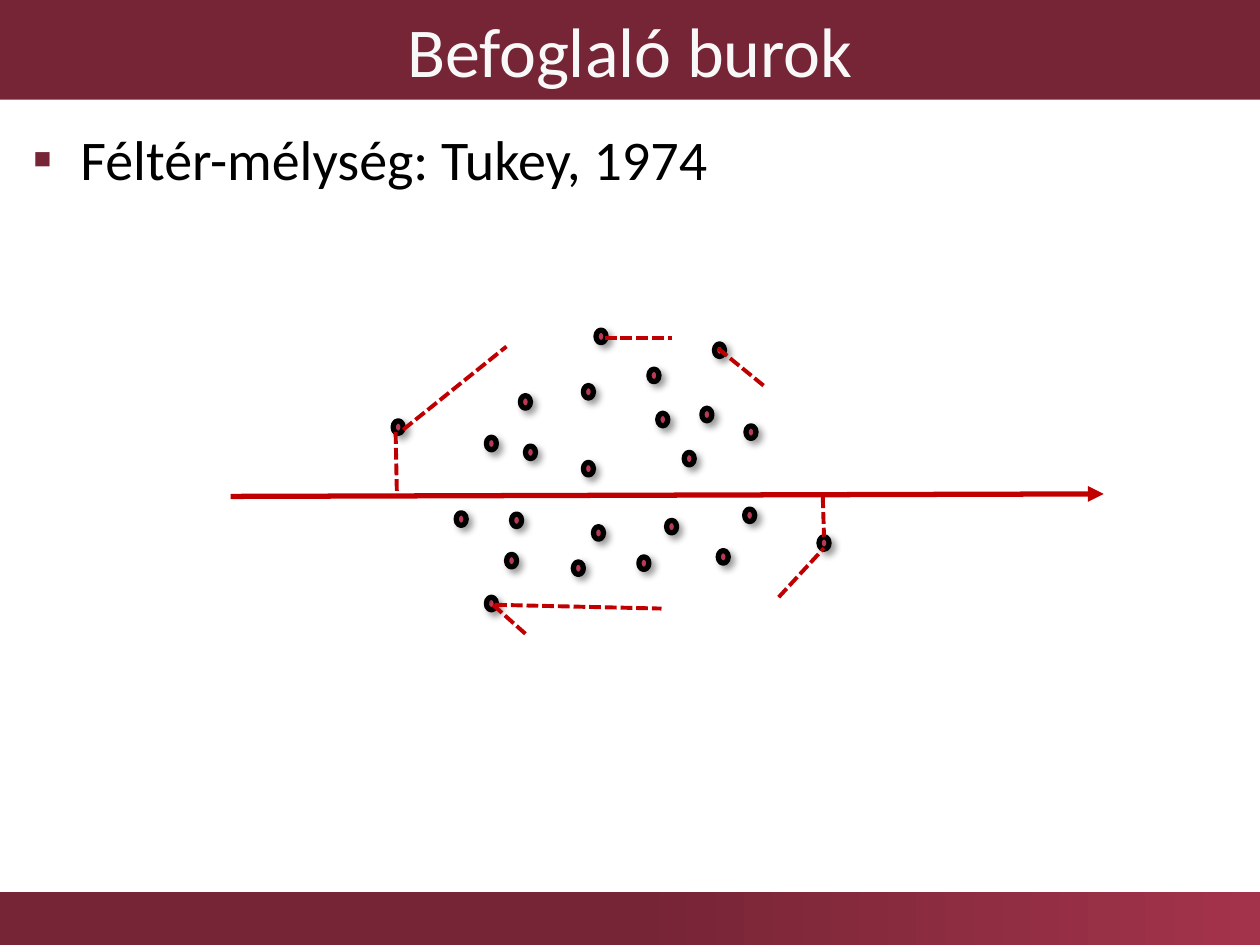
from lxml.etree import SubElement
from pptx import Presentation
from pptx.dml.color import RGBColor
from pptx.enum.dml import MSO_LINE
from pptx.enum.shapes import MSO_CONNECTOR, MSO_SHAPE
from pptx.enum.text import MSO_ANCHOR, PP_ALIGN
from pptx.oxml import parse_xml
from pptx.oxml.ns import nsdecls, qn
from pptx.util import Inches, Pt

TITLE = "Befoglaló burok"
BULLET_TEXT = "Féltér-mélység: Tukey, 1974"
FONT = "Calibri"
COLORS = {
    "band": "762536",
    "band_end": "A3334B",
    "title": "F8F8F8",
    "text": "000000",
    "point": "B83A55",
    "outline": "000000",
    "line": "C00000",
}

POINT_WIDTH, POINT_HEIGHT = 0.08, 0.1
POINTS = [  # left, top
    (4.13, 3.14), (3.62, 4.07), (4.17, 3.54), (5.29, 4.13), (5.22, 3.28), (4.73, 2.62),
    (6.5, 4.26), (5.57, 3.24), (3.86, 3.47), (4.06, 4.08), (3.12, 3.34), (4.63, 3.67),
    (5.43, 3.59), (4.71, 4.18), (5.92, 3.38), (5.15, 2.93), (3.86, 4.74), (4.02, 4.4),
    (4.55, 4.46), (4.63, 3.06), (5.91, 4.04), (5.7, 4.37), (5.67, 2.73), (5.07, 4.42),
]
AXIS = (1.83, 3.94, 8.76, 3.92)
HULL_LINES = [  # start x, start y, end x, end y
    (4.17, 5.03, 3.89, 4.78), (3.93, 4.8, 5.25, 4.83),
    (6.53, 3.94, 6.54, 4.26), (3.14, 3.43, 3.15, 3.93),
    (6.06, 3.06, 5.68, 2.75), (4.8, 2.68, 5.33, 2.68),
    (6.18, 4.74, 6.54, 4.35), (3.2, 3.41, 4.02, 2.75),
]


def color(name):
    return RGBColor.from_string(COLORS[name])


def add_shape(slide, kind, left, top, width, height, fill):
    shape = slide.shapes.add_shape(
        kind, Inches(left), Inches(top), Inches(width), Inches(height))
    shape.shadow.inherit = False
    shape.fill.solid()
    shape.fill.fore_color.rgb = color(fill)
    shape.line.fill.background()
    return shape


def add_run(paragraph, text, size, color_name):
    run = paragraph.add_run()
    run.text = text
    run.font.name = FONT
    run.font.size = Pt(size)
    run.font.color.rgb = color(color_name)


def add_bands(slide):
    footer = add_shape(slide, MSO_SHAPE.RECTANGLE, 0, 7.08, 10, 0.42, "band")
    footer.fill.gradient()
    footer.fill.gradient_angle = 0
    stops = [(0.5, "band"), (1, "band_end")]
    for stop, (position, name) in zip(footer.fill.gradient_stops, stops):
        stop.position = position
        stop.color.rgb = color(name)

    header = add_shape(slide, MSO_SHAPE.RECTANGLE, 0, 0, 10, 0.79, "band")
    header.text_frame.vertical_anchor = MSO_ANCHOR.MIDDLE
    paragraph = header.text_frame.paragraphs[0]
    paragraph.alignment = PP_ALIGN.CENTER
    add_run(paragraph, TITLE, 40, "title")


def add_body(slide):
    box = slide.shapes.add_textbox(Inches(0.16), Inches(0.94), Inches(9.69), Inches(6.05))
    box.text_frame.word_wrap = True
    paragraph = box.text_frame.paragraphs[0]
    properties = paragraph._p.get_or_add_pPr()
    properties.set("marL", str(Inches(0.38)))
    properties.set("indent", str(-Inches(0.38)))
    bullet_color = SubElement(properties, qn("a:buClr"))
    SubElement(bullet_color, qn("a:srgbClr"), val=COLORS["band"])
    SubElement(properties, qn("a:buFont"), typeface=FONT)
    SubElement(properties, qn("a:buChar"), char="▪")
    add_run(paragraph, BULLET_TEXT, 32, "text")


def add_point(slide, left, top):
    point = add_shape(slide, MSO_SHAPE.OVAL, left, top, POINT_WIDTH, POINT_HEIGHT, "point")
    point.line.color.rgb = color("outline")
    point.line.width = Pt(3)
    effects = point._element.spPr.find(qn("a:effectLst"))
    effects.append(parse_xml(
        f'<a:outerShdw {nsdecls("a")} blurRad="{Pt(4)}" dist="{Pt(3)}" dir="2700000" '
        f'algn="tl" rotWithShape="0"><a:srgbClr val="{COLORS["outline"]}">'
        '<a:alpha val="40000"/></a:srgbClr></a:outerShdw>'))


def add_line(slide, ends, width):
    line = slide.shapes.add_connector(
        MSO_CONNECTOR.STRAIGHT, *(Inches(value) for value in ends))
    line.line.color.rgb = color("line")
    line.line.width = Pt(width)
    SubElement(line._element.spPr, qn("a:effectLst"))
    return line


def main():
    presentation = Presentation()
    presentation.slide_width = Inches(10)
    presentation.slide_height = Inches(7.5)
    slide = presentation.slides.add_slide(presentation.slide_layouts[6])

    add_bands(slide)
    add_body(slide)
    axis = add_line(slide, AXIS, 3)
    SubElement(axis.line._get_or_add_ln(), qn("a:tailEnd"), type="triangle")
    for left, top in POINTS:
        add_point(slide, left, top)
    for ends in HULL_LINES:
        add_line(slide, ends, 2.25).line.dash_style = MSO_LINE.SQUARE_DOT

    presentation.save("out.pptx")


if __name__ == "__main__":
    main()
